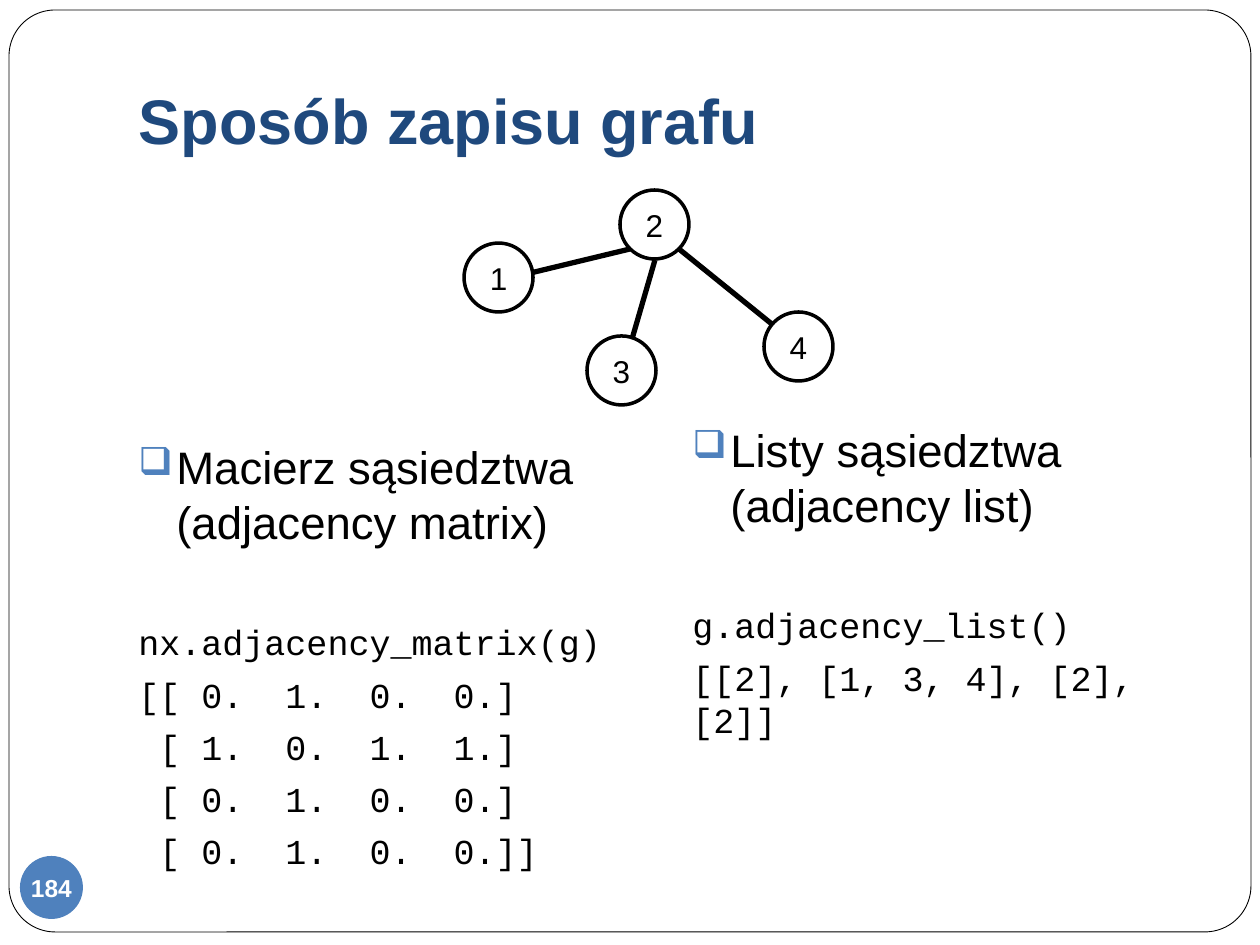
from lxml.etree import SubElement
from pptx import Presentation
from pptx.dml.color import RGBColor
from pptx.enum.shapes import MSO_CONNECTOR as Connector, MSO_SHAPE as Shape
from pptx.enum.text import MSO_ANCHOR as Anchor, PP_ALIGN as Align
from pptx.oxml.ns import qn
from pptx.util import Emu, Pt

PX_PER_INCH = 126
BLACK, WHITE, NAVY, BLUE = "000000", "FFFFFF", "1F497D", "4F81BD"

NODE_SIZE = 69
NODES = {"1": (464, 243), "2": (620, 190), "3": (587, 336), "4": (764, 312)}
EDGES = [((630, 249), (514, 277)), ((799, 346), (679, 249)), ((655, 260), (630, 346))]

MATRIX_CODE = [
    "nx.adjacency_matrix(g)",
    "[[ 0.  1.  0.  0.]",
    " [ 1.  0.  1.  1.]",
    " [ 0.  1.  0.  0.]",
    " [ 0.  1.  0.  0.]]",
]
LIST_CODE = ["g.adjacency_list()", "[[2], [1, 3, 4], [2], [2]]"]


def px(length):
    return Emu(round(length * 914400 / PX_PER_INCH))


def colour(code):
    return RGBColor.from_string(code)


def add_run(paragraph, text, size, code=BLACK, font="Arial", bold=False):
    run = paragraph.add_run()
    run.text = text
    run.font.name = font
    run.font.size = Pt(size)
    run.font.bold = bold
    run.font.color.rgb = colour(code)


def set_insets(frame, left, top, right, bottom):
    frame.margin_left, frame.margin_top = px(left), px(top)
    frame.margin_right, frame.margin_bottom = px(right), px(bottom)


def add_outline(slide, kind, box, fill, line_width=None):
    outline = slide.shapes.add_shape(kind, *map(px, box))
    outline.shadow.inherit = False
    outline.fill.solid()
    outline.fill.fore_color.rgb = colour(fill)
    if line_width:
        outline.line.color.rgb = colour(BLACK)
        outline.line.width = Pt(line_width)
    else:
        outline.line.fill.background()
    return outline


def add_disc(slide, box, label, size, fill, text_colour, line_width=None, bold=False):
    disc = add_outline(slide, Shape.OVAL, box, fill, line_width)
    frame = disc.text_frame
    frame.word_wrap = False
    frame.vertical_anchor = Anchor.MIDDLE
    set_insets(frame, 0, 0, 0, 0)
    frame.paragraphs[0].alignment = Align.CENTER
    add_run(frame.paragraphs[0], label, size, text_colour, bold=bold)


def add_edge(slide, start, end):
    edge = slide.shapes.add_connector(Connector.STRAIGHT, *map(px, start + end))
    edge.line.color.rgb = colour(BLACK)
    edge.line.width = Pt(3)
    SubElement(edge.element.spPr, qn("a:effectLst"))


def add_bullet(paragraph):
    props = paragraph._p.get_or_add_pPr()
    props.set("marL", str(px(38)))
    props.set("indent", str(-px(38)))
    bullet_colour = SubElement(props, qn("a:buClr"))
    SubElement(bullet_colour, qn("a:srgbClr"), val=BLUE)
    SubElement(props, qn("a:buSzPct"), val="85000")
    SubElement(props, qn("a:buChar"), char="❑")


def add_notation(slide, box, heading, code_lines):
    frame = slide.shapes.add_textbox(*map(px, box)).text_frame
    frame.word_wrap = True
    top = frame.paragraphs[0]
    top.space_before = Pt(5.8)
    add_bullet(top)
    add_run(top, heading, 26)
    for index, code_line in enumerate(code_lines):
        paragraph = frame.add_paragraph()
        # The code stands one heading line below the heading
        paragraph.space_before = Pt(5.8 if index else 41.5)
        add_run(paragraph, code_line, 20, font="Courier New")


def set_title(slide, text):
    title = slide.shapes.title
    title.left, title.top, title.width, title.height = map(px, (126, 38, 1071, 132))
    frame = title.text_frame
    frame.vertical_anchor = Anchor.BOTTOM
    set_insets(frame, 13, 6, 13, 13)
    frame.paragraphs[0].alignment = Align.LEFT
    add_run(frame.paragraphs[0], text, 36, NAVY, bold=True)


def main():
    deck = Presentation()
    deck.slide_width, deck.slide_height = px(1260), px(945)
    slide = deck.slides.add_slide(deck.slide_layouts[5])

    # Page border, placed behind the title
    border = add_outline(slide, Shape.ROUNDED_RECTANGLE, (9, 10, 1242, 922), WHITE, 0.5)
    border.adjustments[0] = 0.05
    slide.shapes.title.element.addprevious(border.element)

    # Title and page number
    set_title(slide, "Sposób zapisu grafu")
    add_disc(slide, (20, 856, 63, 63), "184", 14, BLUE, WHITE, bold=True)

    # The two ways of writing the graph
    add_notation(slide, (126, 433, 517, 486),
                 "Macierz sąsiedztwa (adjacency matrix)", MATRIX_CODE)
    add_notation(slide, (680, 416, 517, 493),
                 "Listy sąsiedztwa (adjacency list)", LIST_CODE)

    # Graph: edges below, nodes above
    for start, end in EDGES:
        add_edge(slide, start, end)
    for label, corner in NODES.items():
        add_disc(slide, corner + (NODE_SIZE, NODE_SIZE), label, 18, WHITE, BLACK, 2)

    deck.save("out.pptx")


if __name__ == "__main__":
    main()
